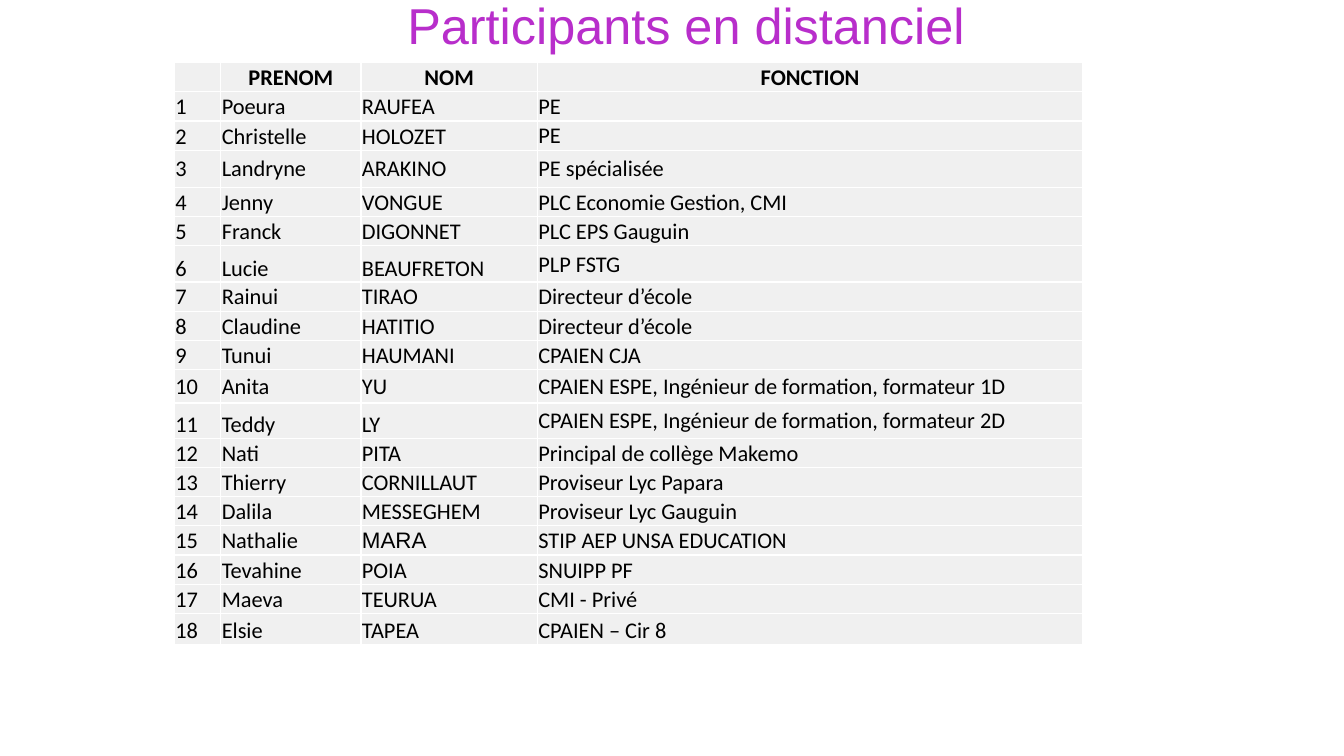
"""Build a slide listing the remote participants in a table."""
from lxml import etree
from pptx import Presentation
from pptx.dml.color import RGBColor
from pptx.enum.text import MSO_ANCHOR, PP_ALIGN
from pptx.oxml.ns import qn
from pptx.util import Inches, Pt

MIDDLE, BOTTOM = MSO_ANCHOR.MIDDLE, MSO_ANCHOR.BOTTOM
CENTER, LEFT = PP_ALIGN.CENTER, PP_ALIGN.LEFT
PURPLE = RGBColor(0xB8, 0x2E, 0xCB)
BLACK = RGBColor(0x00, 0x00, 0x00)
WHITE = RGBColor(0xFF, 0xFF, 0xFF)
GREY = RGBColor(0xF0, 0xF0, 0xF0)

COLUMN_WIDTHS = [0.46, 1.39, 1.75, 5.41]
ROW_HEIGHT = 0.29
TALL_ROWS = {3: 0.37, 6: 0.36, 10: 0.33, 11: 0.35, 18: 0.31}
HEADER = ("PRENOM", "NOM", "FONCTION", MIDDLE, MIDDLE)
PARTICIPANTS = [
    ("Poeura", "RAUFEA", "PE", MIDDLE, MIDDLE),
    ("Christelle", "HOLOZET", "PE", BOTTOM, MIDDLE),
    ("Landryne", "ARAKINO", "PE spécialisée", MIDDLE, MIDDLE),
    ("Jenny", "VONGUE", "PLC Economie Gestion, CMI", BOTTOM, BOTTOM),
    ("Franck", "DIGONNET", "PLC EPS Gauguin", BOTTOM, BOTTOM),
    ("Lucie", "BEAUFRETON", "PLP FSTG", BOTTOM, MIDDLE),
    ("Rainui", "TIRAO", "Directeur d’école", MIDDLE, MIDDLE),
    ("Claudine", "HATITIO", "Directeur d’école", BOTTOM, MIDDLE),
    ("Tunui", "HAUMANI", "CPAIEN CJA", BOTTOM, MIDDLE),
    ("Anita", "YU", "CPAIEN ESPE, Ingénieur de formation, formateur 1D", MIDDLE, MIDDLE),
    ("Teddy", "LY", "CPAIEN ESPE, Ingénieur de formation, formateur 2D", BOTTOM, MIDDLE),
    ("Nati", "PITA", "Principal de collège Makemo", MIDDLE, MIDDLE),
    ("Thierry", "CORNILLAUT", "Proviseur Lyc Papara", MIDDLE, BOTTOM),
    ("Dalila", "MESSEGHEM", "Proviseur Lyc Gauguin", BOTTOM, MIDDLE),
    ("Nathalie", "MARA", "STIP AEP UNSA EDUCATION", MIDDLE, MIDDLE),
    ("Tevahine", "POIA", "SNUIPP PF", BOTTOM, BOTTOM),
    ("Maeva", "TEURUA", "CMI - Privé", BOTTOM, BOTTOM),
    ("Elsie", "TAPEA", "CPAIEN – Cir 8", BOTTOM, BOTTOM),
]


def write(para, text, font_name, size, color, align):
    para.text = text
    para.alignment = align
    para.font.name = font_name
    para.font.size = Pt(size)
    para.font.color.rgb = color


def add_borders(cell):
    properties = cell._tc.get_or_add_tcPr()
    for side in ("a:lnL", "a:lnR", "a:lnT", "a:lnB"):
        line = etree.SubElement(properties, qn(side), w=str(Pt(1)))
        fill = etree.SubElement(line, qn("a:solidFill"))
        etree.SubElement(fill, qn("a:srgbClr"), val=str(WHITE))


deck = Presentation()
deck.slide_width, deck.slide_height = Inches(13.33), Inches(7.5)
page = deck.slides.add_slide(deck.slide_layouts[6])

rows = [HEADER] + PARTICIPANTS
table_frame = page.shapes.add_table(
    len(rows), len(COLUMN_WIDTHS), Inches(1.73), Inches(0.62), Inches(9.01), Inches(5.75))
table = table_frame.table
table.first_row = table.horz_banding = False
for column, width in zip(table.columns, COLUMN_WIDTHS):
    column.width = Inches(width)

for number, (first_name, last_name, role, name_anchor, role_anchor) in enumerate(rows):
    table.rows[number].height = Inches(TALL_ROWS.get(number, ROW_HEIGHT))
    is_header = number == 0
    texts = ["" if is_header else str(number), first_name, last_name, role]
    anchors = [name_anchor] * 3 + [role_anchor]
    for cell, text, anchor in zip(table.rows[number].cells, texts, anchors):
        cell.margin_left = cell.margin_right = cell.margin_top = Inches(0.01)
        cell.margin_bottom = Inches(0)
        cell.vertical_anchor = anchor
        add_borders(cell)
        cell.fill.solid()
        cell.fill.fore_color.rgb = GREY
        para = cell.text_frame.paragraphs[0]
        font_name = "Arial" if text == "MARA" else "Calibri"
        write(para, text, font_name, 16, BLACK, CENTER if is_header else LEFT)
        para.font.bold = is_header

title_box = page.shapes.add_textbox(Inches(2), Inches(0), Inches(9.61), Inches(0.56))
title_frame = title_box.text_frame
title_frame.word_wrap = True
title_frame.margin_top = title_frame.margin_bottom = Inches(0)
title_frame.vertical_anchor = MIDDLE
title = title_frame.paragraphs[0]
write(title, "Participants en distanciel", "Arial", 36, PURPLE, CENTER)
title.line_spacing = 0.9

deck.save("out.pptx")
